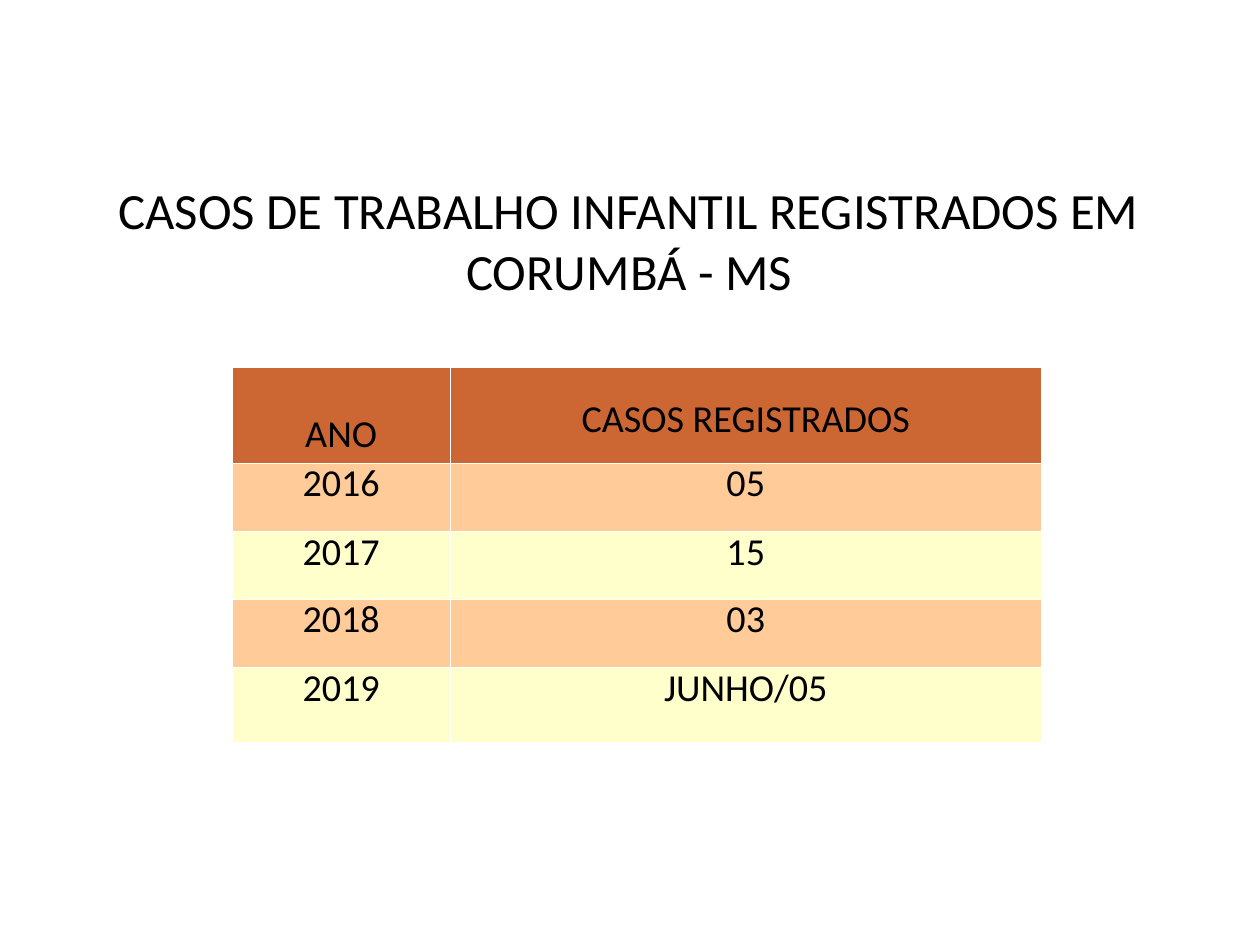
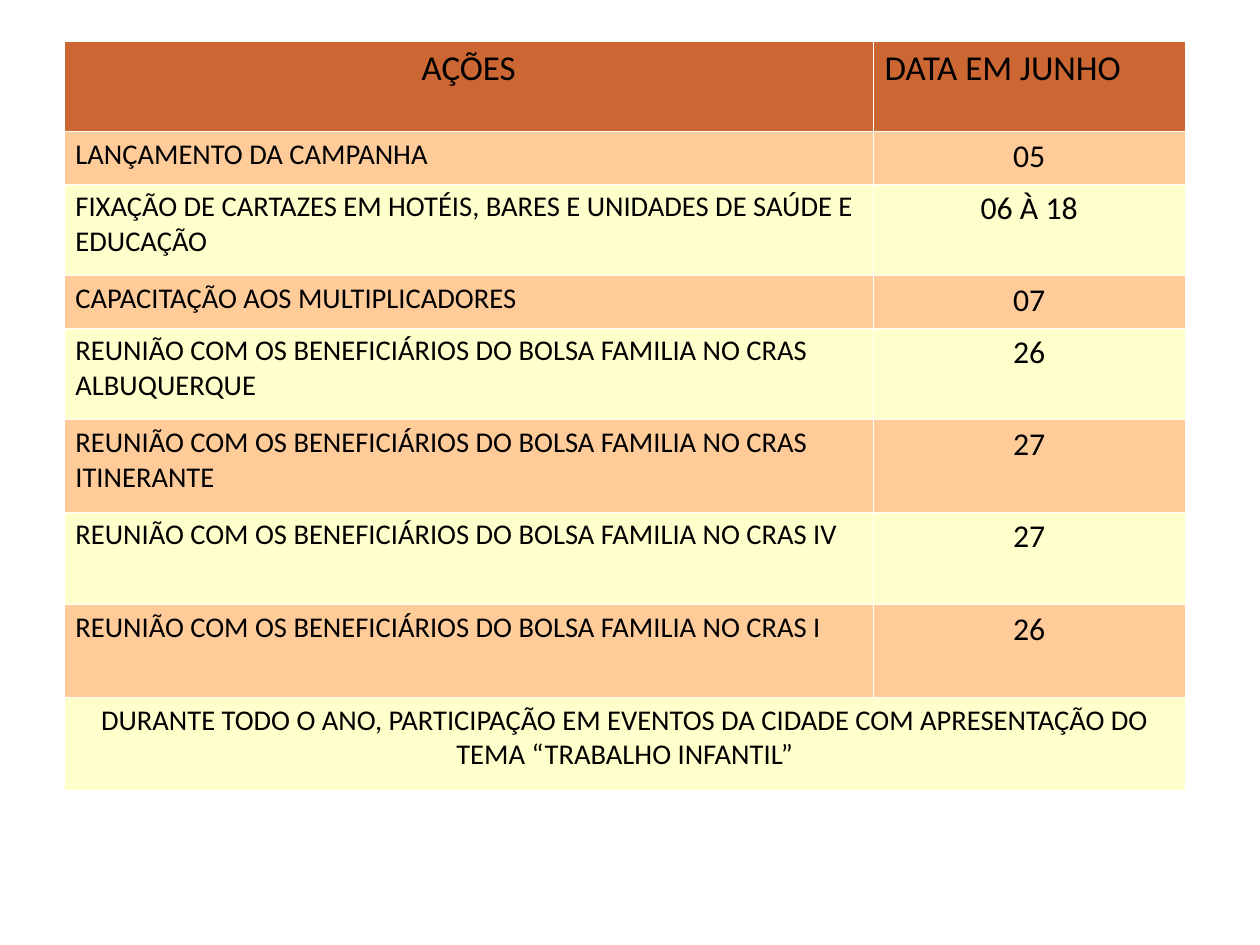
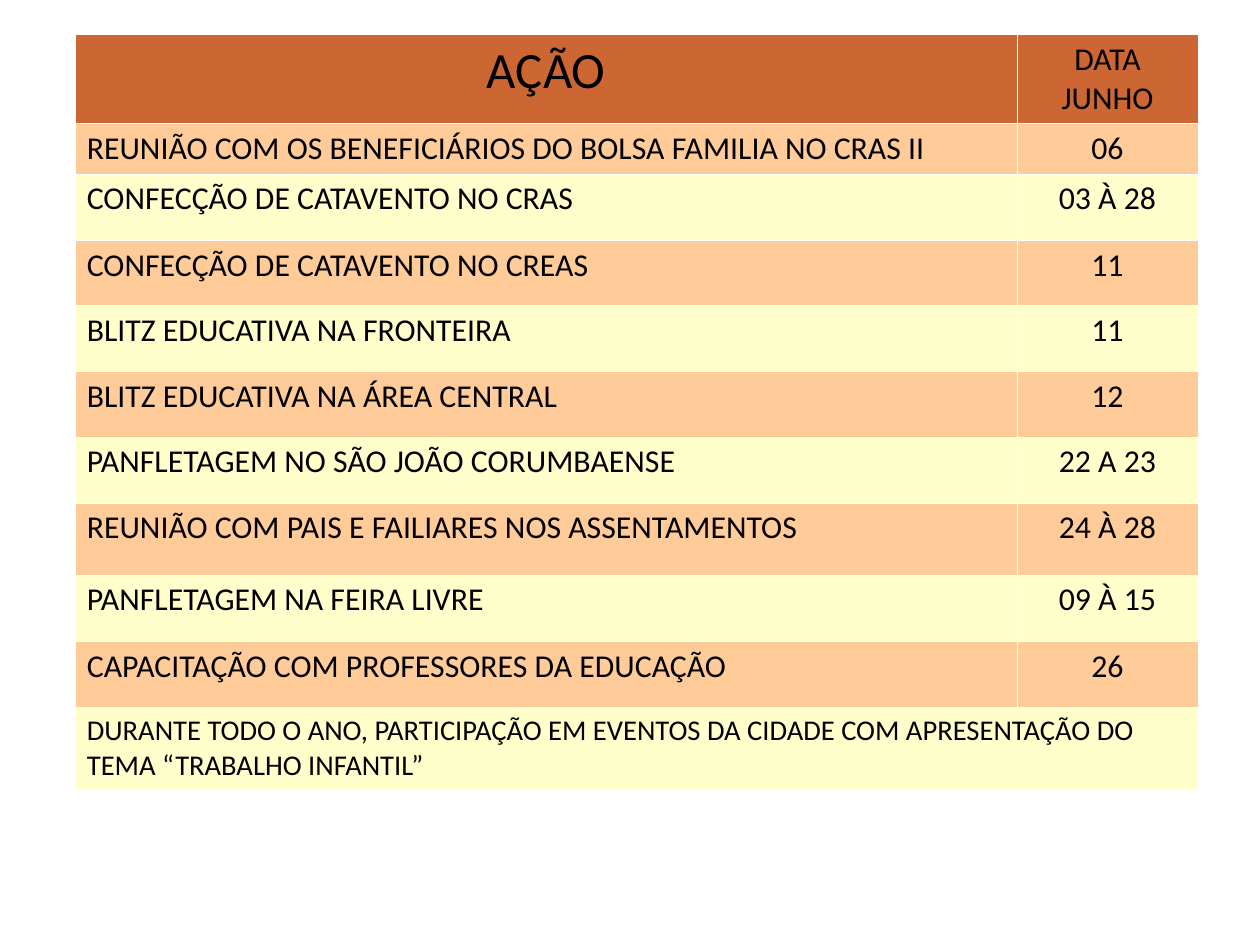
import pptx
import pptx.util
import pptx.dml.color
import pptx.enum.text
import pptx.oxml
from lxml import etree

Inches = pptx.util.Inches
Pt = pptx.util.Pt
RGBColor = pptx.dml.color.RGBColor
ALIGN = pptx.enum.text.PP_ALIGN
ANCHOR = pptx.enum.text.MSO_ANCHOR

# Shared look; the page is 28 by 21 cm
CM_PER_INCH = 2.54
PAGE_WIDTH = Inches(28 / CM_PER_INCH)
PAGE_HEIGHT = Inches(21 / CM_PER_INCH)
FONT = "Calibri"
BLACK = RGBColor(0x00, 0x00, 0x00)
HEADER = RGBColor(0xCC, 0x66, 0x33)
BANDS = (RGBColor(0xFF, 0xCC, 0x99), RGBColor(0xFF, 0xFF, 0xCC))
BORDER = RGBColor(0xFF, 0xFF, 0xFF)
BORDER_WIDTH = Pt(0.06)
NS = "http://schemas.openxmlformats.org/drawingml/2006/main"

TITLE_ONLY, BLANK = 5, 6

# Content
MEETING = "REUNIÃO COM OS BENEFICIÁRIOS DO BOLSA FAMILIA NO CRAS "
ALL_YEAR = ("DURANTE TODO O ANO, PARTICIPAÇÃO EM EVENTOS DA CIDADE "
            "COM APRESENTAÇÃO DO TEMA “TRABALHO INFANTIL”")

CASES = [
    ("ANO", "CASOS REGISTRADOS"),
    ("2016", "05"),
    ("2017", "15"),
    ("2018", "03"),
    ("2019", "JUNHO/05"),
]
ACTIONS = [
    ("AÇÕES", "DATA EM JUNHO"),
    ("LANÇAMENTO DA CAMPANHA", "05"),
    ("FIXAÇÃO DE CARTAZES EM HOTÉIS, BARES E UNIDADES DE SAÚDE E EDUCAÇÃO",
     "06 À 18"),
    ("CAPACITAÇÃO AOS MULTIPLICADORES", "07"),
    (MEETING + "ALBUQUERQUE", "26"),
    (MEETING + "ITINERANTE", "27"),
    (MEETING + "IV", "27"),
    (MEETING + "I", "26"),
    (ALL_YEAR,),
]
MORE_ACTIONS = [
    ("AÇÃO", "DATA JUNHO"),
    (MEETING + "II", "06"),
    ("CONFECÇÃO DE CATAVENTO NO CRAS", "03 À 28"),
    ("CONFECÇÃO DE CATAVENTO NO CREAS", "11"),
    ("BLITZ EDUCATIVA NA FRONTEIRA", "11"),
    ("BLITZ EDUCATIVA NA ÁREA CENTRAL", "12"),
    ("PANFLETAGEM NO SÃO JOÃO CORUMBAENSE", "22 A 23"),
    ("REUNIÃO COM PAIS E FAILIARES NOS ASSENTAMENTOS", "24 À 28"),
    ("PANFLETAGEM NA FEIRA LIVRE", "09 À 15"),
    ("CAPACITAÇÃO COM PROFESSORES DA EDUCAÇÃO", "26"),
    (ALL_YEAR,),
]


def add_text(p, text, size, align):
    p.alignment = align
    r = p.add_run()
    r.text = text
    r.font.name = FONT
    r.font.size = Pt(size)
    r.font.bold = False
    r.font.color.rgb = BLACK


def set_title(s, text):
    title = s.shapes.title
    title.left, title.top = Inches(0.31), Inches(1.12)
    title.width, title.height = Inches(10.39), Inches(1.95)
    tf = title.text_frame
    tf.word_wrap = True
    tf.auto_size = pptx.enum.text.MSO_AUTO_SIZE.NONE
    tf.vertical_anchor = ANCHOR.MIDDLE
    tf.margin_left = tf.margin_top = tf.margin_right = tf.margin_bottom = 0
    add_text(tf.paragraphs[0], text, 32, ALIGN.CENTER)


def set_borders(cell):
    tc_pr = cell._tc.get_or_add_tcPr()
    for side in ("lnL", "lnR", "lnT", "lnB"):
        ln = etree.SubElement(tc_pr, f"{{{NS}}}{side}", w=str(BORDER_WIDTH))
        fill = etree.SubElement(ln, f"{{{NS}}}solidFill")
        etree.SubElement(fill, f"{{{NS}}}srgbClr", val=str(BORDER))


def format_cell(cell, fill):
    set_borders(cell)
    cell.fill.solid()
    cell.fill.fore_color.rgb = fill
    cell.margin_left = cell.margin_right = Inches(0.1)
    cell.margin_top = cell.margin_bottom = Inches(0.05)
    cell.vertical_anchor = ANCHOR.TOP


def add_banded_table(s, left, top, widths, heights, rows, sizes, aligns,
                     line_spacing=1.0):
    """A row with one text spans the table; sizes and aligns are
    given for the header, body and spanning rows."""
    table = s.shapes.add_table(
        len(rows), len(widths), Inches(left), Inches(top),
        Inches(sum(widths)), Inches(sum(heights))).table
    table.first_row = table.horz_banding = False
    for column, width in zip(table.columns, widths):
        column.width = Inches(width)
    for i, (texts, height) in enumerate(zip(rows, heights)):
        table.rows[i].height = Inches(height)
        spanning = len(texts) == 1
        part = "header" if i == 0 else "span" if spanning else "body"
        for j in range(len(widths)):
            format_cell(table.cell(i, j), BANDS[(i - 1) % 2] if i else HEADER)
        if spanning:
            table.cell(i, 0).merge(table.cell(i, len(widths) - 1))
        for j, text in enumerate(texts):
            p = table.cell(i, j).text_frame.paragraphs[0]
            if line_spacing != 1.0:
                p.line_spacing = line_spacing
            add_text(p, text, sizes[part][j], aligns[part][j])
    return table


def add_cases_slide(prs):
    s = prs.slides.add_slide(prs.slide_layouts[TITLE_ONLY])
    set_title(s, "CASOS DE TRABALHO INFANTIL REGISTRADOS EM CORUMBÁ - MS")
    centered = (ALIGN.CENTER, ALIGN.CENTER)
    table = add_banded_table(
        s, 2.03, 3.21, (1.91, 5.17), [0.84, 0.6, 0.59, 0.6, 0.65], CASES,
        {"header": (24, 24), "body": (24, 24)},
        {"header": centered, "body": centered}, line_spacing=0.76)
    # The header labels sit low in their cells
    for j, margin in enumerate((0.46, 0.33)):
        table.cell(0, j).margin_top = Inches(margin)


def add_actions_slide(prs):
    s = prs.slides.add_slide(prs.slide_layouts[BLANK])
    add_banded_table(
        s, 0.56, 0.36, (7.08, 2.73),
        [0.79, 0.46, 0.8, 0.46, 0.8] + [0.81] * 4, ACTIONS,
        {"header": (22, 22), "body": (18, 20), "span": (18,)},
        {"header": (ALIGN.CENTER, ALIGN.LEFT),
         "body": (ALIGN.LEFT, ALIGN.CENTER), "span": (ALIGN.CENTER,)})


def add_more_actions_slide(prs):
    s = prs.slides.add_slide(prs.slide_layouts[BLANK])
    add_banded_table(
        s, 0.66, 0.3, (8.24, 1.58),
        [0.77, 0.44] + [0.58, 0.57] * 2 + [0.58, 0.63, 0.58, 0.58, 0.71],
        MORE_ACTIONS,
        {"header": (32, 20), "body": (20, 20), "span": (18,)},
        {"header": (ALIGN.CENTER, ALIGN.CENTER),
         "body": (ALIGN.LEFT, ALIGN.CENTER), "span": (ALIGN.LEFT,)})


def main():
    prs = pptx.Presentation()
    prs.slide_width, prs.slide_height = PAGE_WIDTH, PAGE_HEIGHT
    add_cases_slide(prs)
    add_actions_slide(prs)
    add_more_actions_slide(prs)
    prs.save("out.pptx")


if __name__ == "__main__":
    main()
